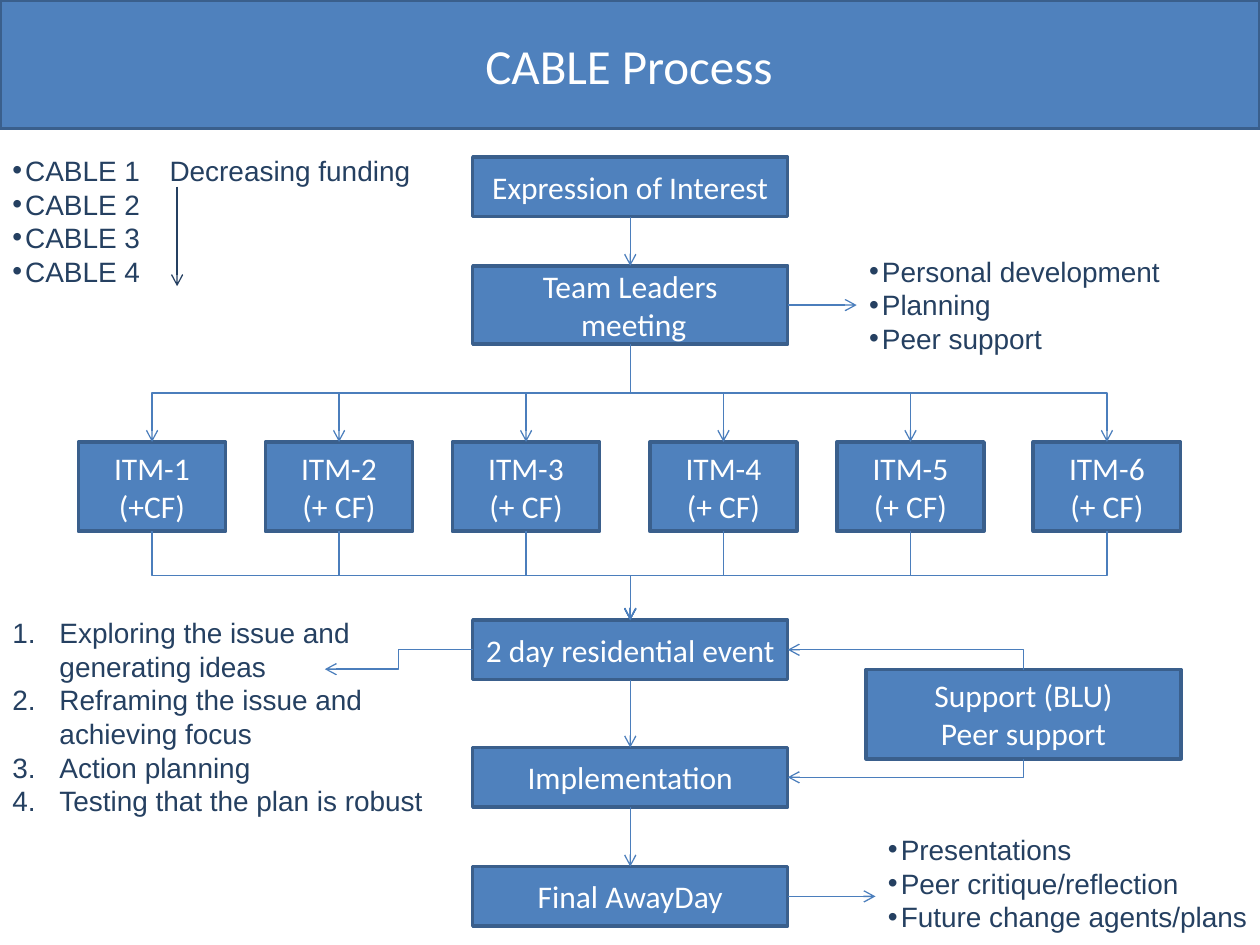
from dataclasses import dataclass

from lxml import etree
from pptx import Presentation
from pptx.dml.color import RGBColor
from pptx.enum.shapes import MSO_CONNECTOR, MSO_SHAPE
from pptx.enum.text import MSO_ANCHOR, PP_ALIGN
from pptx.oxml.ns import qn
from pptx.util import Cm, Pt

RECTANGLE = MSO_SHAPE.RECTANGLE
STRAIGHT, ELBOW = MSO_CONNECTOR.STRAIGHT, MSO_CONNECTOR.ELBOW
LEFT, CENTER = PP_ALIGN.LEFT, PP_ALIGN.CENTER
TOP, MIDDLE = MSO_ANCHOR.TOP, MSO_ANCHOR.MIDDLE
# Connection sites of a rectangle
SITE_TOP, SITE_LEFT, SITE_BOTTOM, SITE_RIGHT = range(4)


@dataclass(frozen=True)
class Theme:
    fill: RGBColor = RGBColor(0x4F, 0x81, 0xBD)
    border: RGBColor = RGBColor(0x3A, 0x5F, 0x8C)
    arrow: RGBColor = RGBColor(0x4B, 0x7E, 0xBC)
    light: RGBColor = RGBColor(0xFF, 0xFF, 0xFF)
    dark: RGBColor = RGBColor(0x25, 0x40, 0x61)
    box_font: str = "Calibri"
    note_font: str = "Arial"
    title_size: int = 28
    box_size: int = 18
    note_size: int = 16
    border_width: float = 2
    arrow_width: float = 0.75


THEME = Theme()


@dataclass(frozen=True)
class Box:
    """A step of the process; lengths in centimetres."""
    lines: tuple
    left: float
    top: float
    width: float = 6.35
    height: float = 1.2


@dataclass(frozen=True)
class Note:
    lines: tuple
    left: float
    top: float
    width: float
    height: float
    bullet: str = ""
    hanging: float = 0
    wrap: bool = False


COLUMN = 9.53
INTEREST = Box(("Expression of Interest",), COLUMN, 3.17)
LEADERS = Box(("Team Leaders", " meeting"), COLUMN, 5.36, height=1.58)
RESIDENTIAL = Box(("2 day residential event",), COLUMN, 12.5)
IMPLEMENTATION = Box(("Implementation",), COLUMN, 15.07)
AWAY_DAY = Box(("Final AwayDay",), COLUMN, 17.47)
SUPPORT = Box(("Support (BLU)", "Peer support"), 17.46, 13.5, height=1.8)
TEAM_LEFTS = (1.58, 5.35, 9.12, 13.1, 16.87, 20.83)
TEAMS = [
    Box((f"ITM-{number}", "(+CF)" if number == 1 else "(+ CF)"), left, 8.91, 2.97, 1.8)
    for number, left in enumerate(TEAM_LEFTS, 1)
]

NOTES = (
    Note(tuple(f"CABLE {number}" for number in range(1, 5)),
         0, 2.97, 3.38, 3, "•", 0.26, True),
    Note(("Decreasing funding",), 3.17, 2.97, 5.41, 0.94),
    Note(("Personal development", "Planning", "Peer support"),
         17.27, 5, 6.65, 2.31, "•", 0.26),
    Note(("Exploring the issue and generating ideas",
          "Reframing the issue and achieving focus",
          "Action planning", "Testing that the plan is robust"),
         0, 12.29, 8.94, 4.37, "1.", 0.95, True),
    Note(("Presentations", "Peer critique/reflection", "Future change agents/plans"),
         17.65, 16.66, 7.85, 2.31, "•", 0.26),
)


def write_text(shape, lines: tuple, *, font: str, size: float, color: RGBColor,
               align=CENTER, anchor=MIDDLE, wrap: bool = True,
               bullet: str = "", hanging: float = 0) -> None:
    frame = shape.text_frame
    frame.word_wrap = wrap
    frame.vertical_anchor = anchor
    for index, line in enumerate(lines):
        paragraph = frame.paragraphs[0] if index == 0 else frame.add_paragraph()
        paragraph.alignment = align
        run = paragraph.add_run()
        run.text = line
        run.font.name = font
        run.font.size = Pt(size)
        run.font.color.rgb = color
        if bullet:
            add_bullet(paragraph, bullet, hanging)


def add_bullet(paragraph, bullet: str, hanging: float) -> None:
    properties = paragraph._p.get_or_add_pPr()
    properties.set("marL", str(Cm(hanging)))
    properties.set("indent", str(-Cm(hanging)))
    etree.SubElement(properties, qn("a:buFont")).set("typeface", THEME.note_font)
    if bullet == "1.":
        etree.SubElement(properties, qn("a:buAutoNum")).set("type", "arabicPeriod")
    else:
        etree.SubElement(properties, qn("a:buChar")).set("char", bullet)


def add_panel(slide, left: float, top: float, width: float, height: float):
    shape = slide.shapes.add_shape(RECTANGLE, Cm(left), Cm(top), Cm(width), Cm(height))
    shape.shadow.inherit = False
    shape.fill.solid()
    shape.fill.fore_color.rgb = THEME.fill
    shape.line.color.rgb = THEME.border
    shape.line.width = Pt(THEME.border_width)
    return shape


def add_box(slide, box: Box):
    shape = add_panel(slide, box.left, box.top, box.width, box.height)
    shape.text_frame.margin_left = shape.text_frame.margin_right = Cm(0.2)
    write_text(shape, box.lines, font=THEME.box_font, size=THEME.box_size,
               color=THEME.light)
    return shape


def add_note(slide, note: Note) -> None:
    shape = slide.shapes.add_textbox(Cm(note.left), Cm(note.top),
                                     Cm(note.width), Cm(note.height))
    write_text(shape, note.lines, font=THEME.note_font, size=THEME.note_size,
               color=THEME.dark, align=LEFT, anchor=TOP, wrap=note.wrap,
               bullet=note.bullet, hanging=note.hanging)


def site_point(shape, site: int) -> tuple:
    middle_x = shape.left + shape.width // 2
    middle_y = shape.top + shape.height // 2
    return {
        SITE_TOP: (middle_x, shape.top),
        SITE_LEFT: (shape.left, middle_y),
        SITE_BOTTOM: (middle_x, shape.top + shape.height),
        SITE_RIGHT: (shape.left + shape.width, middle_y),
    }[site]


def add_arrow(slide, start: tuple, end: tuple, kind=STRAIGHT,
              color: RGBColor = THEME.arrow):
    connector = slide.shapes.add_connector(kind, *start, *end)
    connector.line.color.rgb = color
    connector.line.width = Pt(THEME.arrow_width)
    properties = connector._element.spPr
    etree.SubElement(properties.find(qn("a:ln")), qn("a:tailEnd")).set("type", "arrow")
    etree.SubElement(properties, qn("a:effectLst"))
    return connector


def link(slide, source, source_site: int, target, target_site: int, kind=STRAIGHT):
    connector = add_arrow(slide, site_point(source, source_site),
                          site_point(target, target_site), kind)
    connector.begin_connect(source, source_site)
    connector.end_connect(target, target_site)
    return connector


def link_vertical_first(slide, source, source_site: int, target, target_site: int,
                        preset: str = "bentConnector3") -> None:
    """Turn an elbow by a quarter so that it leaves its source vertically."""
    connector = link(slide, source, source_site, target, target_site, ELBOW)
    (x1, y1), (x2, y2) = site_point(source, source_site), site_point(target, target_site)
    width, height = abs(y2 - y1), abs(x2 - x1)
    connector.left, connector.top = (x1 + x2 - width) // 2, (y1 + y2 - height) // 2
    connector.width, connector.height = width, height
    properties = connector._element.spPr
    properties.find(qn("a:prstGeom")).set("prst", preset)
    transform = properties.find(qn("a:xfrm"))
    down_left = x2 < x1 and y2 > y1
    transform.set("rot", str((90 if down_left else 270) * 60000))
    transform.set("flipH", str(int(x2 > x1)))
    transform.set("flipV", str(int(y2 < y1)))


def main() -> None:
    presentation = Presentation()
    presentation.slide_width, presentation.slide_height = Cm(25.4), Cm(19.05)
    slide = presentation.slides.add_slide(presentation.slide_layouts[5])

    # Title on its banner
    banner = add_panel(slide, 0, 0, 25.4, 2.59)
    title = slide.shapes.title
    title._element.addprevious(banner._element)
    title.left, title.top, title.width, title.height = Cm(0.58), Cm(0.2), Cm(24.2), Cm(2.2)
    write_text(title, ("CABLE Process",), font=THEME.box_font, size=THEME.title_size,
               color=THEME.light)

    # Process steps
    interest, leaders, residential, implementation, away_day, support = (
        add_box(slide, box) for box in
        (INTEREST, LEADERS, RESIDENTIAL, IMPLEMENTATION, AWAY_DAY, SUPPORT))
    for team_box in TEAMS:
        team = add_box(slide, team_box)
        link_vertical_first(slide, leaders, SITE_BOTTOM, team, SITE_TOP)
        link_vertical_first(slide, team, SITE_BOTTOM, residential, SITE_TOP)
    for upper, lower in ((interest, leaders), (residential, implementation),
                         (implementation, away_day)):
        link(slide, upper, SITE_BOTTOM, lower, SITE_TOP)
    for site, step in ((SITE_TOP, residential), (SITE_BOTTOM, implementation)):
        link_vertical_first(slide, support, site, step, SITE_RIGHT, "bentConnector2")

    # Notes and the arrows that lead to them
    for note in NOTES:
        add_note(slide, note)
    for step, end_x in ((leaders, 17.27), (away_day, 17.65)):
        start = site_point(step, SITE_RIGHT)
        add_arrow(slide, start, (Cm(end_x), start[1]))
    add_arrow(slide, site_point(residential, SITE_LEFT), (Cm(6.55), Cm(13.49)), ELBOW)
    add_arrow(slide, (Cm(3.57), Cm(3.76)), (Cm(3.57), Cm(5.77)), color=THEME.dark)

    presentation.save("out.pptx")


if __name__ == "__main__":
    main()
